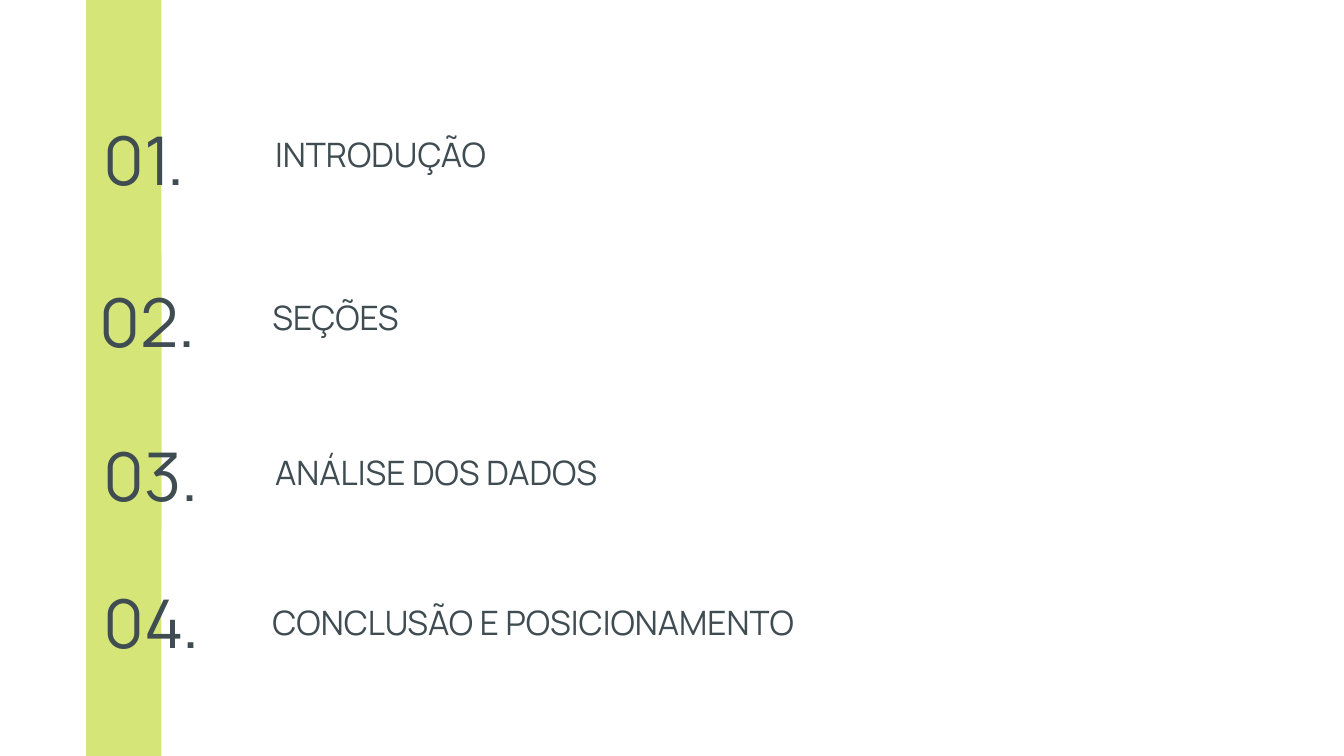
from pptx import Presentation
from pptx.dml.color import RGBColor
from pptx.enum.shapes import MSO_SHAPE
from pptx.enum.text import MSO_ANCHOR, MSO_AUTO_SIZE, PP_ALIGN
from pptx.util import Cm, Pt

RECT = MSO_SHAPE.RECTANGLE
TOP, MIDDLE, BOTTOM = MSO_ANCHOR.TOP, MSO_ANCHOR.MIDDLE, MSO_ANCHOR.BOTTOM
LEFT = PP_ALIGN.LEFT
NO_FIT = MSO_AUTO_SIZE.NONE

LIME = RGBColor(0xD6, 0xE5, 0x77)
SLATE = RGBColor(0x3F, 0x4D, 0x53)
WHITE = RGBColor(0xFF, 0xFF, 0xFF)

WIDTH, HEIGHT = 25.4, 14.29
BAR_LEFT, BAR_WIDTH = 1.63, 1.42


class AgendaSlide:
    font = "Manrope"
    inset = Cm(0.25)

    def __init__(self, prs):
        self.s = prs.slides.add_slide(prs.slide_layouts[5])
        fill = self.s.background.fill
        fill.solid()
        fill.fore_color.rgb = WHITE

    def bar(self, top, bottom):
        sp = self.s.shapes.add_shape(
            RECT, Cm(BAR_LEFT), Cm(top), Cm(BAR_WIDTH), Cm(bottom - top))
        sp.shadow.inherit = False
        sp.fill.solid()
        sp.fill.fore_color.rgb = LIME
        sp.line.fill.background()

    def title(self, text, box, size, anchor):
        sp = self.s.shapes.title
        sp.left, sp.top, sp.width, sp.height = [Cm(v) for v in box]
        self.set_text(sp, text, size, anchor)

    def text(self, text, box, size, anchor):
        sp = self.s.shapes.add_textbox(*[Cm(v) for v in box])
        self.set_text(sp, text, size, anchor)

    def set_text(self, sp, text, size, anchor):
        tf = sp.text_frame
        tf.text = text
        tf.word_wrap = True
        tf.auto_size = NO_FIT
        tf.vertical_anchor = anchor
        tf.margin_left = tf.margin_right = self.inset
        tf.margin_top = tf.margin_bottom = self.inset
        p = tf.paragraphs[0]
        p.alignment = LEFT
        font = p.runs[0].font
        font.name = self.font
        font.size = Pt(size)
        font.color.rgb = SLATE


def main():
    prs = Presentation()
    prs.slide_width, prs.slide_height = Cm(WIDTH), Cm(HEIGHT)
    slide = AgendaSlide(prs)

    # Side band: two overlapping bars
    slide.bar(0, 10.03)
    slide.bar(4.78, HEIGHT)

    # Section names; the first one is the slide title
    slide.title("INTRODUÇÃO", (4.95, 2.41, 7.8, 1.14), 18, BOTTOM)
    slide.text("SEÇÕES", (4.9, 5.49, 7.8, 1.14), 18, BOTTOM)
    slide.text("ANÁLISE DOS DADOS", (4.95, 8.41, 7.8, 1.14), 18, BOTTOM)
    slide.text("CONCLUSÃO E POSICIONAMENTO", (4.9, 11.13, 13.23, 1.27), 18, TOP)

    # Section numbers
    numbers = [(1.7, 2.24, 1.5, MIDDLE), (1.63, 5.31, 1.5, MIDDLE),
               (1.7, 8.23, 1.5, MIDDLE), (1.7, 10.74, 2.06, TOP)]
    for i, (left, top, height, anchor) in enumerate(numbers, 1):
        slide.text(f"{i:02}.", (left, top, 2.59, height), 36, anchor)

    prs.save("out.pptx")


if __name__ == "__main__":
    main()
